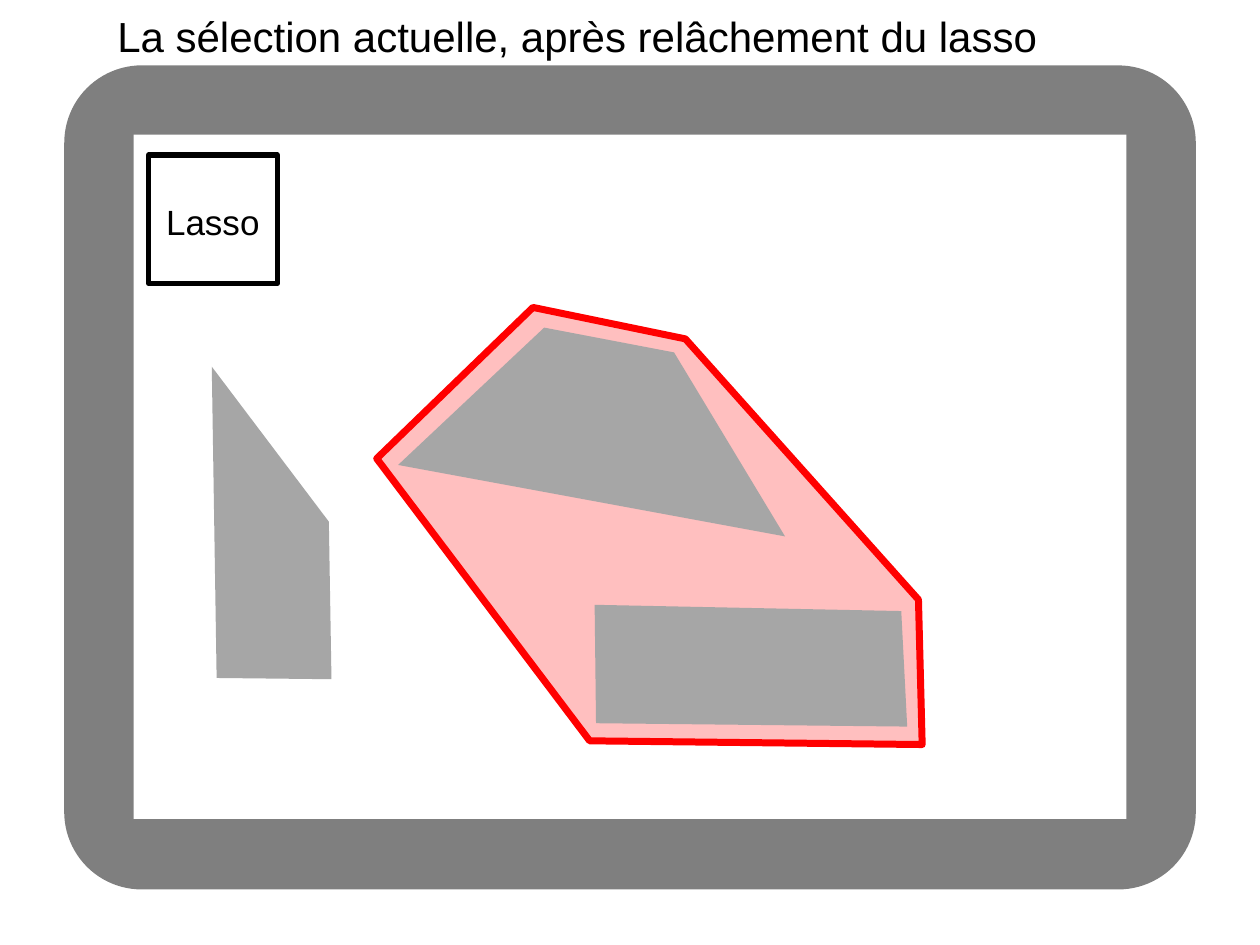
from lxml.etree import SubElement
from pptx import Presentation
from pptx.dml.color import RGBColor
from pptx.enum.shapes import MSO_SHAPE
from pptx.enum.text import MSO_ANCHOR, PP_ALIGN
from pptx.oxml.ns import qn
from pptx.util import Pt

COLORS = {
    "black": "000000",
    "white": "FFFFFF",
    "red": "FF0000",
    "gray": "A6A6A6",
}
LASSO = [(304.6, 175.7), (215.3, 262.1), (337, 423.4),
         (527, 425.5), (524.9, 342.7), (391.7, 193.7)]
OBJECTS = [
    [(123.8, 387.4), (121, 209.5), (187.9, 298.1), (189.4, 388.1)],
    [(227.5, 265.7), (448.6, 306.5), (385.2, 201.4), (311, 187.2)],
    [(339.8, 345.6), (340.6, 413.3), (518.4, 415.2), (515, 349.2)],
]


def color(name):
    """Return the named colour."""
    return RGBColor.from_string(COLORS[name])


def style(sp, fill, alpha=100, line=None, width=0):
    """Set the fill, its opacity in percent, and the outline of a shape."""
    sp.shadow.inherit = False
    sp.fill.solid()
    sp.fill.fore_color.rgb = color(fill)
    if alpha < 100:
        clr = sp._element.spPr.find(qn("a:solidFill"))[0]
        SubElement(clr, qn("a:alpha"), val=str(alpha * 1000))
    if line:
        sp.line.color.rgb = color(line)
        sp.line.width = Pt(width)
    else:
        sp.line.fill.background()


def add_box(s, kind, box, fill, **look):
    """Add a preset shape."""
    sp = s.shapes.add_shape(kind, *map(Pt, box))
    style(sp, fill, **look)
    return sp


def add_polygon(s, points, fill, **look):
    """Add a closed polygon through the given points."""
    start, *rest = [(Pt(x), Pt(y)) for x, y in points]
    builder = s.shapes.build_freeform(*start)
    builder.add_line_segments(rest, close=True)
    style(builder.convert_to_shape(), fill, **look)


def set_text(sp, box, text, size, align):
    """Place a text shape and format its single line."""
    sp.left, sp.top, sp.width, sp.height = map(Pt, box)
    tf = sp.text_frame
    tf.text = text
    tf.word_wrap = True
    tf.vertical_anchor = MSO_ANCHOR.TOP
    p = tf.paragraphs[0]
    p.alignment = align
    p.line_spacing = 1.0
    p.space_before = Pt(0)
    font = p.runs[0].font
    font.name = "Arial"
    font.size = Pt(size)
    font.color.rgb = color("black")


def main():
    """Build the lasso selection slide."""
    prs = Presentation()
    prs.slide_width, prs.slide_height = Pt(720), Pt(540)
    s = prs.slides.add_slide(prs.slide_layouts[5])

    frame = add_box(s, MSO_SHAPE.ROUNDED_RECTANGLE,
                    (36.7, 37.4, 646.6, 470.9), "black", alpha=50)
    frame.adjustments[0] = 0.094
    add_box(s, MSO_SHAPE.RECTANGLE, (76.3, 77, 567.4, 391), "white")

    add_polygon(s, LASSO, "red", alpha=25, line="red", width=4)
    for points in OBJECTS:
        add_polygon(s, points, "gray")

    add_box(s, MSO_SHAPE.RECTANGLE, (85, 88.6, 73.4, 73.4), "white",
            alpha=50, line="black", width=3)
    label = s.shapes.add_textbox(0, 0, 0, 0)
    set_text(label, (87.8, 110.9, 67.7, 31.7), "Lasso", 20, PP_ALIGN.CENTER)
    set_text(s.shapes.title, (59.8, 2.2, 619.9, 36.7),
             "La sélection actuelle, après relâchement du lasso",
             24, PP_ALIGN.LEFT)

    prs.save("out.pptx")


if __name__ == "__main__":
    main()
